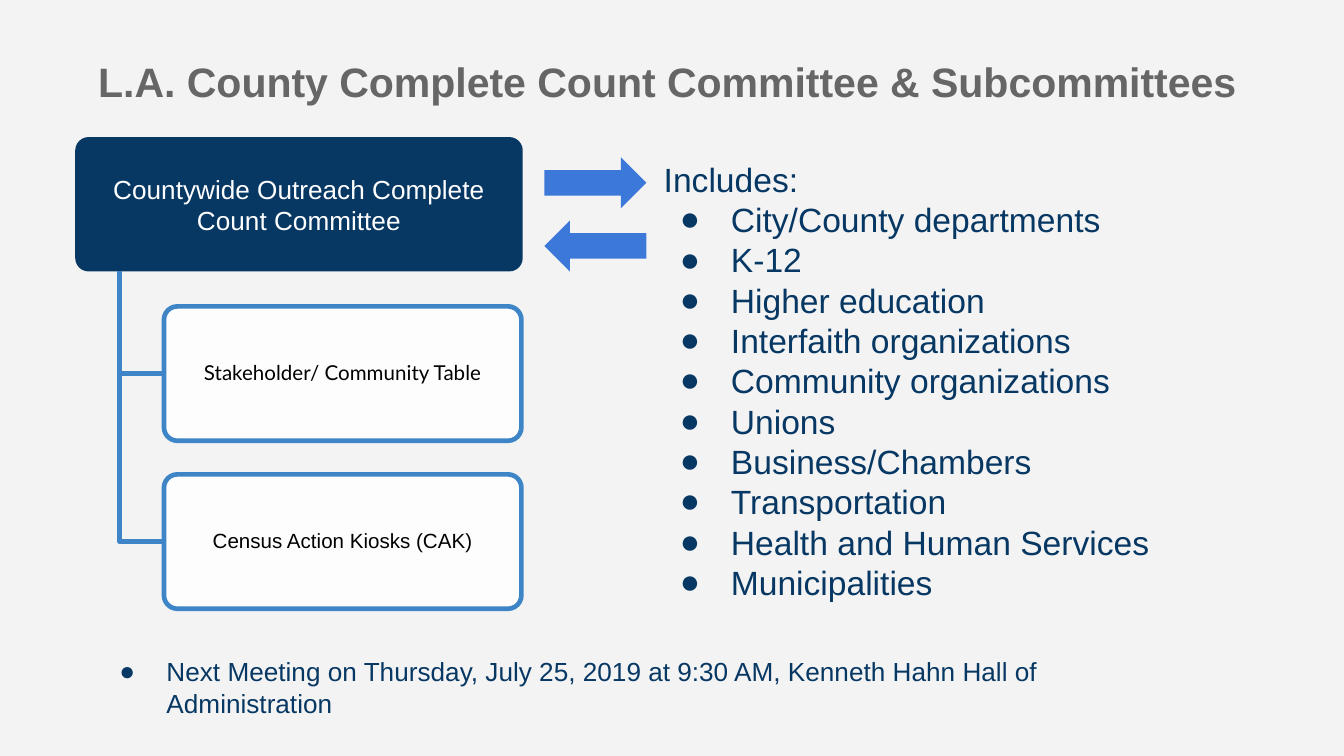
from dataclasses import dataclass

from lxml import etree
from pptx import Presentation
from pptx.dml.color import RGBColor
from pptx.enum.shapes import MSO_SHAPE
from pptx.enum.text import MSO_ANCHOR, PP_ALIGN
from pptx.oxml.ns import qn
from pptx.shapes.autoshape import Shape
from pptx.slide import Slide
from pptx.text.text import TextFrame, _Paragraph
from pptx.util import Inches, Pt

ROUNDED = MSO_SHAPE.ROUNDED_RECTANGLE
ARROW = MSO_SHAPE.RIGHT_ARROW
CENTER = PP_ALIGN.CENTER
LEFT = PP_ALIGN.LEFT
MIDDLE = MSO_ANCHOR.MIDDLE
TOP = MSO_ANCHOR.TOP

COLORS = {
    "background": "F3F3F3",
    "title": "666666",
    "navy": "073763",
    "outline": "3D85C6",
    "arrow": "3C78D8",
    "white": "FFFFFF",
    "black": "000000",
}


@dataclass(frozen=True)
class Box:
    left: float
    top: float
    width: float
    height: float


@dataclass(frozen=True)
class TextStyle:
    size: float
    color: str
    font: str = "Arial"
    bold: bool = False
    alignment: PP_ALIGN = LEFT
    line_spacing: float = 1.0


@dataclass(frozen=True)
class Subcommittee:
    name: str
    font: str


SLIDE_WIDTH = 10
SLIDE_HEIGHT = SLIDE_WIDTH * 9 / 16
COMMITTEE_BOX = Box(0.56, 1.02, 3.33, 1)
SUBCOMMITTEE_LEFT = 1.22
SUBCOMMITTEE_WIDTH = 2.66
SUBCOMMITTEE_PITCH = 1.25
TRUNK_LEFT = 0.89

SUBCOMMITTEES = [
    Subcommittee("Stakeholder/ Community Table", "Lato"),
    Subcommittee("Census Action Kiosks (CAK)", "Arial"),
]
MEMBERS = [
    "City/County departments",
    "K-12",
    "Higher education",
    "Interfaith organizations",
    "Community organizations",
    "Unions",
    "Business/Chambers",
    "Transportation",
    "Health and Human Services",
    "Municipalities",
]


def rgb(name: str) -> RGBColor:
    return RGBColor.from_string(COLORS[name])


def add_bullet(paragraph: _Paragraph, hanging: float) -> None:
    properties = paragraph._p.get_or_add_pPr()
    properties.set("marL", str(Inches(0.5)))
    properties.set("indent", str(-Inches(hanging)))
    bullet_color = etree.SubElement(properties, qn("a:buClr"))
    etree.SubElement(bullet_color, qn("a:srgbClr"), val=COLORS["navy"])
    etree.SubElement(properties, qn("a:buFont"), typeface="Arial")
    etree.SubElement(properties, qn("a:buChar"), char="●")


def format_text(text_frame: TextFrame, style: TextStyle, anchor: MSO_ANCHOR) -> None:
    text_frame.word_wrap = True
    text_frame.vertical_anchor = anchor
    text_frame.margin_left = text_frame.margin_right = Inches(0.1)
    text_frame.margin_top = text_frame.margin_bottom = Inches(0.1)
    for paragraph in text_frame.paragraphs:
        paragraph.alignment = style.alignment
        paragraph.line_spacing = style.line_spacing
        for run in paragraph.runs:
            run.font.size = Pt(style.size)
            run.font.name = style.font
            run.font.bold = style.bold
            run.font.color.rgb = rgb(style.color)


def add_text(slide: Slide, box: Box, text: str, style: TextStyle) -> TextFrame:
    shape = slide.shapes.add_textbox(
        Inches(box.left), Inches(box.top), Inches(box.width), Inches(box.height)
    )
    shape.text_frame.text = text
    format_text(shape.text_frame, style, TOP)
    return shape.text_frame


def add_filled_shape(slide: Slide, kind: MSO_SHAPE, box: Box, color: str) -> Shape:
    shape = slide.shapes.add_shape(
        kind, Inches(box.left), Inches(box.top), Inches(box.width), Inches(box.height)
    )
    shape.shadow.inherit = False
    shape.fill.solid()
    shape.fill.fore_color.rgb = rgb(color)
    shape.line.fill.background()
    return shape


def add_card(slide: Slide, box: Box, color: str, text: str, style: TextStyle) -> Shape:
    card = add_filled_shape(slide, ROUNDED, box, color)
    card.adjustments[0] = 0.1
    card.text_frame.text = text
    format_text(card.text_frame, style, MIDDLE)
    return card


def set_outline(shape: Shape) -> None:
    shape.line.color.rgb = rgb("outline")
    shape.line.width = Pt(2.5)


def add_branch(slide: Slide, end_y: float) -> None:
    start_y = COMMITTEE_BOX.top + COMMITTEE_BOX.height
    builder = slide.shapes.build_freeform(Inches(TRUNK_LEFT), Inches(start_y))
    corners = [
        (Inches(TRUNK_LEFT), Inches(end_y)),
        (Inches(SUBCOMMITTEE_LEFT), Inches(end_y)),
    ]
    builder.add_line_segments(corners, close=False)
    branch = builder.convert_to_shape()
    branch.shadow.inherit = False
    branch.fill.background()
    set_outline(branch)


def add_subcommittee(slide: Slide, subcommittee: Subcommittee, top: float) -> None:
    box = Box(SUBCOMMITTEE_LEFT, top, SUBCOMMITTEE_WIDTH, 1)
    add_branch(slide, top + box.height / 2)
    style = TextStyle(11, "black", subcommittee.font, alignment=CENTER, line_spacing=0.9)
    card = add_card(slide, box, "white", subcommittee.name, style)
    set_outline(card)
    fill_color = card._element.spPr.find(qn("a:solidFill")).find(qn("a:srgbClr"))
    etree.SubElement(fill_color, qn("a:alpha"), val="90000")


def main() -> None:
    presentation = Presentation()
    presentation.slide_width = Inches(SLIDE_WIDTH)
    presentation.slide_height = Inches(SLIDE_HEIGHT)
    slide = presentation.slides.add_slide(presentation.slide_layouts[6])
    slide.background.fill.solid()
    slide.background.fill.fore_color.rgb = rgb("background")

    add_text(
        slide,
        Box(0.01, 0.32, 10, 0.68),
        "L.A. County Complete Count Committee & Subcommittees ",
        TextStyle(22, "title", bold=True, alignment=CENTER),
    )
    add_card(
        slide,
        COMMITTEE_BOX,
        "navy",
        "Countywide Outreach Complete Count Committee",
        TextStyle(14, "white", alignment=CENTER),
    )
    for index, subcommittee in enumerate(SUBCOMMITTEES):
        add_subcommittee(slide, subcommittee, 2.28 + index * SUBCOMMITTEE_PITCH)

    members = add_text(
        slide,
        Box(4.84, 1.08, 4.91, 3.52),
        "\n".join(["Includes:", *MEMBERS]),
        TextStyle(18, "navy"),
    )
    for paragraph in members.paragraphs[1:]:
        add_bullet(paragraph, 0.38)

    for top, rotation in ((1.17, 0), (1.64, 180)):
        arrow = add_filled_shape(slide, ARROW, Box(4.05, top, 0.76, 0.38), "arrow")
        arrow.rotation = rotation

    meeting = add_text(
        slide,
        Box(0.64, 4.78, 8.25, 0.67),
        "Next Meeting on Thursday, July 25, 2019 at 9:30 AM, Kenneth Hahn Hall of Administration",
        TextStyle(14, "navy"),
    )
    add_bullet(meeting.paragraphs[0], 0.35)
    presentation.save("out.pptx")


if __name__ == "__main__":
    main()
